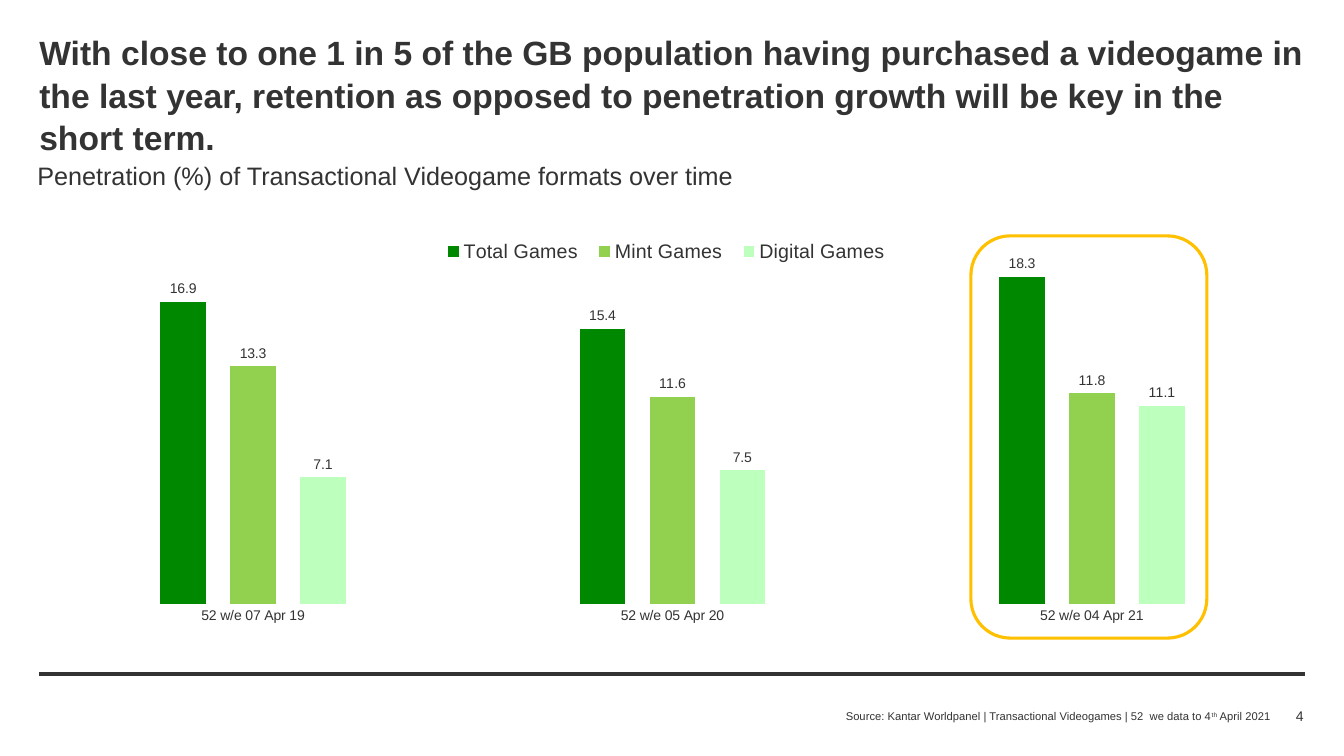
from lxml.etree import SubElement
from pptx import Presentation
from pptx.chart.data import CategoryChartData
from pptx.dml.color import RGBColor
from pptx.enum.chart import XL_CHART_TYPE as ChartType, XL_LABEL_POSITION as LabelPosition
from pptx.enum.chart import XL_LEGEND_POSITION as LegendPosition, XL_TICK_MARK as TickMark
from pptx.enum.shapes import MSO_CONNECTOR as Connector, MSO_SHAPE as Shape
from pptx.enum.text import MSO_ANCHOR as Anchor, PP_ALIGN as Align
from pptx.oxml import parse_xml
from pptx.oxml.ns import nsdecls, qn
from pptx.util import Inches, Pt

DARK = RGBColor(0x33, 0x33, 0x33)
WHITE = RGBColor(0xFF, 0xFF, 0xFF)
AMBER = RGBColor(0xFF, 0xC0, 0x00)
SERIES = [
    ("Total Games", (16.9, 15.4, 18.3), RGBColor(0x00, 0x88, 0x00)),
    ("Mint Games", (13.3, 11.6, 11.8), RGBColor(0x92, 0xD0, 0x50)),
    ("Digital Games", (7.1, 7.5, 11.1), RGBColor(0xBD, 0xFF, 0xBD)),
]
PERIODS = ["52 w/e 07 Apr 19", "52 w/e 05 Apr 20", "52 w/e 04 Apr 21"]
LEFT, CONTENT_WIDTH = 0.39, 12.54


def write(shape, box, runs, size, bold=False, align=Align.LEFT, anchor=Anchor.TOP):
    """Place a text shape at box (inches) and fill its one paragraph; return the runs."""
    shape.left, shape.top, shape.width, shape.height = map(Inches, box)
    frame = shape.text_frame
    frame.word_wrap = True
    frame.vertical_anchor = anchor
    frame.margin_left = frame.margin_right = frame.margin_top = frame.margin_bottom = 0
    paragraph = frame.paragraphs[0]
    paragraph.alignment = align
    paragraph.space_before = 0
    properties = paragraph._p.get_or_add_pPr()
    properties.set("marL", "0")
    properties.set("indent", "0")
    SubElement(properties, qn("a:buNone"))
    font = paragraph.font
    font.name, font.size, font.bold = "Arial", Pt(size), bold
    font.color.rgb = DARK
    for text in runs:
        paragraph.add_run().text = text
    return paragraph.runs


def set_layout(element, index, x, y, width, height, inner=False):
    """Give a chart part a manual layout, in shares of the chart's size."""
    for old in element.findall(qn("c:layout")):
        element.remove(old)
    target = '<c:layoutTarget val="inner"/>' if inner else ""
    element.insert(index, parse_xml(
        f'<c:layout {nsdecls("c")}><c:manualLayout>{target}'
        '<c:xMode val="edge"/><c:yMode val="edge"/>'
        f'<c:x val="{x}"/><c:y val="{y}"/><c:w val="{width}"/><c:h val="{height}"/>'
        '</c:manualLayout></c:layout>'))


presentation = Presentation()
presentation.slide_width, presentation.slide_height = Inches(13.33), Inches(7.5)
slide = presentation.slides.add_slide(presentation.slide_layouts[1])
shapes = slide.shapes

# Title and subtitle
title, subtitle = shapes.title, slide.placeholders[1]
write(title, (LEFT, 0.3, CONTENT_WIDTH, 0.44),
      ["With close to one 1 in 5 of the GB population having purchased a videogame in "
       "the last year, retention as opposed to penetration growth will be key in the "
       "short term."], 24, bold=True)
write(subtitle, (0.37, 1.58, CONTENT_WIDTH, 0.6),
      ["Penetration (%) of Transactional Videogame formats over time"], 18)
for heading in (title, subtitle):
    heading.text_frame.paragraphs[0].line_spacing = 1.05

# Penetration chart
chart_data = CategoryChartData(number_format="0.0")
chart_data.categories = PERIODS
for name, values, _ in SERIES:
    chart_data.add_series(name, values)
chart = shapes.add_chart(ChartType.COLUMN_CLUSTERED, Inches(0.43), Inches(1.88),
                         Inches(12.48), Inches(4.41), chart_data).chart
chart.has_title = False
chart.font.name, chart.font.size = "Arial", Pt(10)
chart.font.color.rgb = DARK

chart.has_legend = True
legend = chart.legend
legend.position = LegendPosition.TOP
legend.include_in_layout = False
legend.font.name, legend.font.size = "Arial", Pt(14)
legend.font.color.rgb = DARK
set_layout(legend._element, 1, 0.31, 0.1, 0.37, 0.08)
set_layout(chart._chartSpace.chart.plotArea, 0, 0, 0.126, 1, 0.807, inner=True)

value_axis, category_axis = chart.value_axis, chart.category_axis
value_axis.minimum_scale, value_axis.maximum_scale = 0, 20
value_axis.has_major_gridlines = False
value_axis.visible = False
category_axis.major_tick_mark = TickMark.NONE
category_axis.format.line.fill.background()

plot = chart.plots[0]
plot.gap_width, plot.overlap = 500, -50
plot.vary_by_categories = False
for series, (_, _, color) in zip(plot.series, SERIES):
    series.format.fill.solid()
    series.format.fill.fore_color.rgb = color
    series.format.line.color.rgb = WHITE
    series.format.line.width = Pt(0.5)
    labels = series.data_labels
    labels.show_value = True
    labels.position = LabelPosition.OUTSIDE_END
    labels.number_format, labels.number_format_is_linked = "0.0", False

# Frame around the latest period
highlight = shapes.add_shape(Shape.ROUNDED_RECTANGLE, Inches(9.63), Inches(2.34),
                             Inches(2.34), Inches(3.99))
highlight.shadow.inherit = False
highlight.fill.background()
highlight.line.color.rgb = AMBER
highlight.line.width = Pt(2.25)

# Footer
rule = shapes.add_connector(Connector.STRAIGHT, Inches(LEFT), Inches(6.69),
                            Inches(12.94), Inches(6.69))
rule.line.color.rgb = DARK
rule.line.width = Pt(3)
SubElement(rule._element.spPr, qn("a:effectLst"))

source_runs = write(shapes.add_textbox(0, 0, 0, 0), (7.73, 7.04, 4.87, 0.13),
                    ["Source: Kantar Worldpanel | Transactional Videogames | 52  we data to 4",
                     "th", " April 2021"], 8, align=Align.RIGHT)
source_runs[1].font._element.set("baseline", "30000")
write(shapes.add_textbox(0, 0, 0, 0), (11.87, 6.99, 1.06, 0.22), ["4"], 10,
      align=Align.RIGHT, anchor=Anchor.MIDDLE)

presentation.save("out.pptx")
